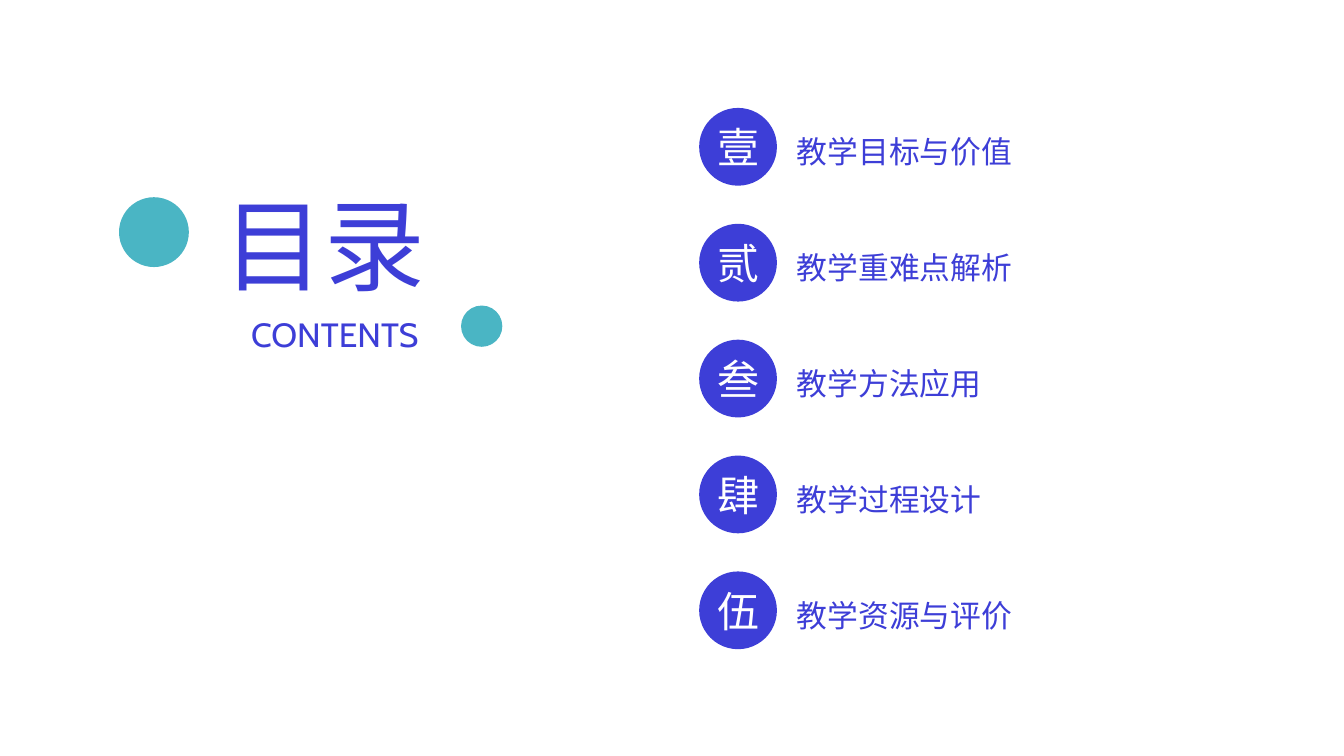
from lxml.etree import SubElement
from pptx import Presentation
from pptx.dml.color import RGBColor
from pptx.enum.shapes import MSO_SHAPE
from pptx.enum.text import MSO_ANCHOR, MSO_AUTO_SIZE, PP_ALIGN
from pptx.oxml.ns import qn
from pptx.util import Cm, Pt

COLORS = {"blue": "3D3ED7", "teal": "4AB5C4", "white": "FFFFFF"}
FONT = "Cabin"
CHAPTERS = [
    ("壹", "教学目标与价值"),
    ("贰", "教学重难点解析"),
    ("叁", "教学方法应用"),
    ("肆", "教学过程设计"),
    ("伍", "教学资源与评价"),
]


def place(shape, left, top, width, height):
    shape.left, shape.top = Cm(left), Cm(top)
    shape.width, shape.height = Cm(width), Cm(height)


def write_text(shape, text, size, color="blue", align=PP_ALIGN.CENTER,
               anchor=MSO_ANCHOR.TOP, line_spacing=1.0, wrap=True):
    """Fill the shape with one paragraph per line of text."""
    frame = shape.text_frame
    frame.text = text
    frame.word_wrap = wrap
    frame.auto_size = MSO_AUTO_SIZE.NONE
    frame.vertical_anchor = anchor
    frame.margin_left = frame.margin_right = 0
    frame.margin_top = frame.margin_bottom = 0
    for paragraph in frame.paragraphs:
        paragraph.alignment = align
        paragraph.line_spacing = line_spacing
        paragraph.space_before = paragraph.space_after = Pt(0)
        for run in paragraph.runs:
            run.font.name = FONT
            run.font.size = Pt(size)
            run.font.color.rgb = RGBColor.from_string(COLORS[color])
            SubElement(run.font._element, qn("a:ea"), typeface=FONT)


def remove_bullets(shape):
    for paragraph in shape.text_frame.paragraphs:
        properties = paragraph._p.get_or_add_pPr()
        properties.set("marL", "0")
        properties.set("indent", "0")
        SubElement(properties, qn("a:buNone"))


def add_circle(slide, left, top, diameter, color):
    circle = slide.shapes.add_shape(
        MSO_SHAPE.OVAL, Cm(left), Cm(top), Cm(diameter), Cm(diameter))
    circle.shadow.inherit = False
    circle.fill.solid()
    circle.fill.fore_color.rgb = RGBColor.from_string(COLORS[color])
    circle.line.fill.background()
    return circle


def add_heading(slide, left, top):
    add_circle(slide, left, top + 0.67, 1.76, "teal")
    add_circle(slide, left + 8.62, top + 3.4, 1.04, "teal")
    title = slide.shapes.title
    place(title, left + 2.62, top, 5.1, 3.07)
    write_text(title, "目录", 72, line_spacing=1.1)
    subtitle = slide.shapes.add_textbox(
        Cm(left + 2.57), Cm(top + 3.5), Cm(5.74), Cm(0.92))
    write_text(subtitle, "CONTENTS", 24, line_spacing=1.1)


def add_chapters(slide, left, top, pitch):
    diameter = 1.96
    for index, (numeral, _) in enumerate(CHAPTERS):
        circle = add_circle(slide, left, top + index * pitch, diameter, "blue")
        write_text(circle, numeral, 30, "white",
                   anchor=MSO_ANCHOR.MIDDLE, wrap=False)
    # Exact line spacing keeps each name level with its circle.
    names = slide.placeholders[1]
    place(names, left + 2.46, top - 1.36, 8, pitch * len(CHAPTERS))
    write_text(names, "\n".join(name for _, name in CHAPTERS), 22,
               align=PP_ALIGN.LEFT, line_spacing=Pt(Cm(pitch).pt))
    remove_bullets(names)


def main():
    presentation = Presentation()
    presentation.slide_width = Cm(33.87)
    presentation.slide_height = Cm(19.05)
    slide = presentation.slides.add_slide(presentation.slide_layouts[1])
    add_heading(slide, left=3, top=4.3)
    add_chapters(slide, left=17.62, top=2.72, pitch=2.92)
    presentation.save("out.pptx")


if __name__ == "__main__":
    main()
